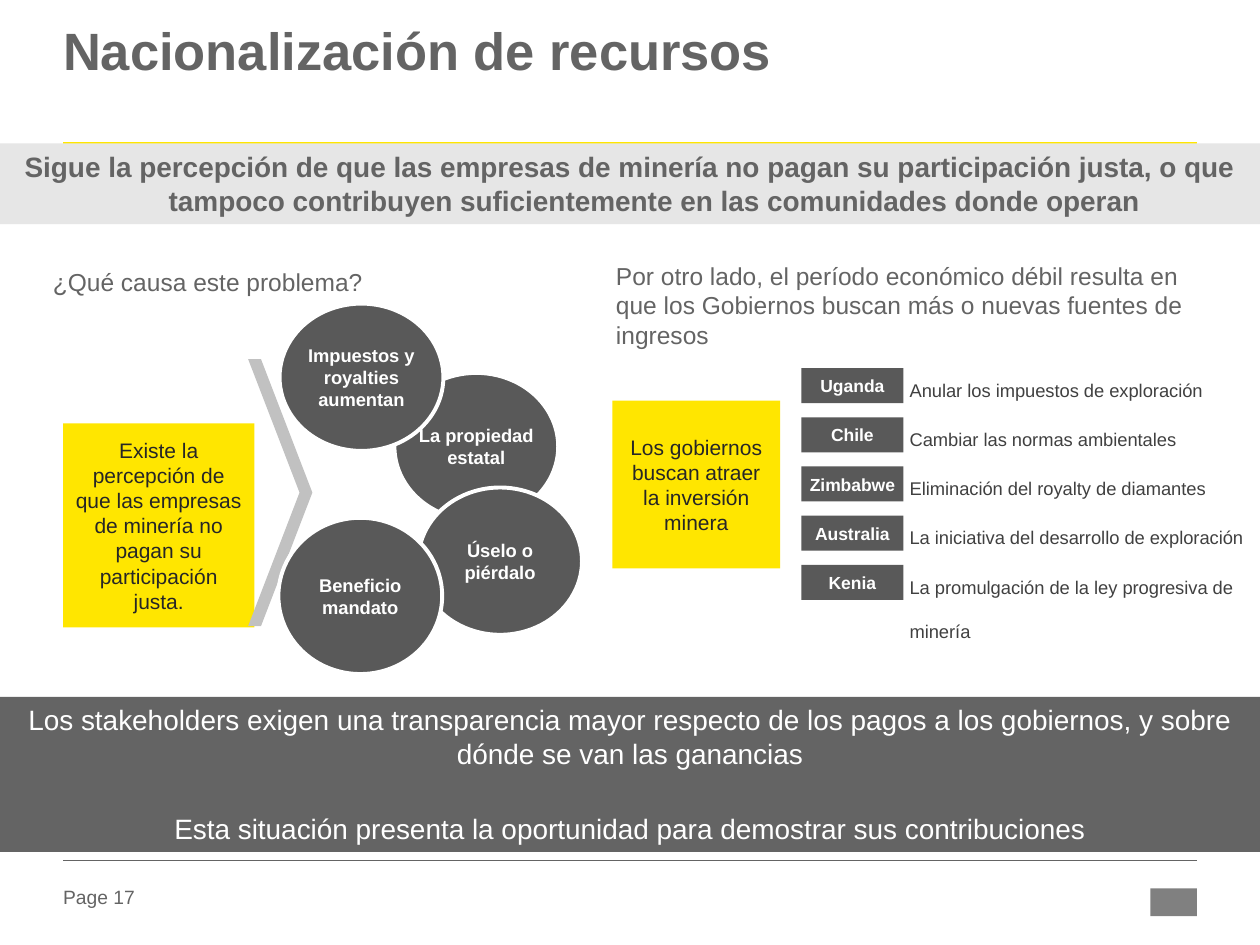
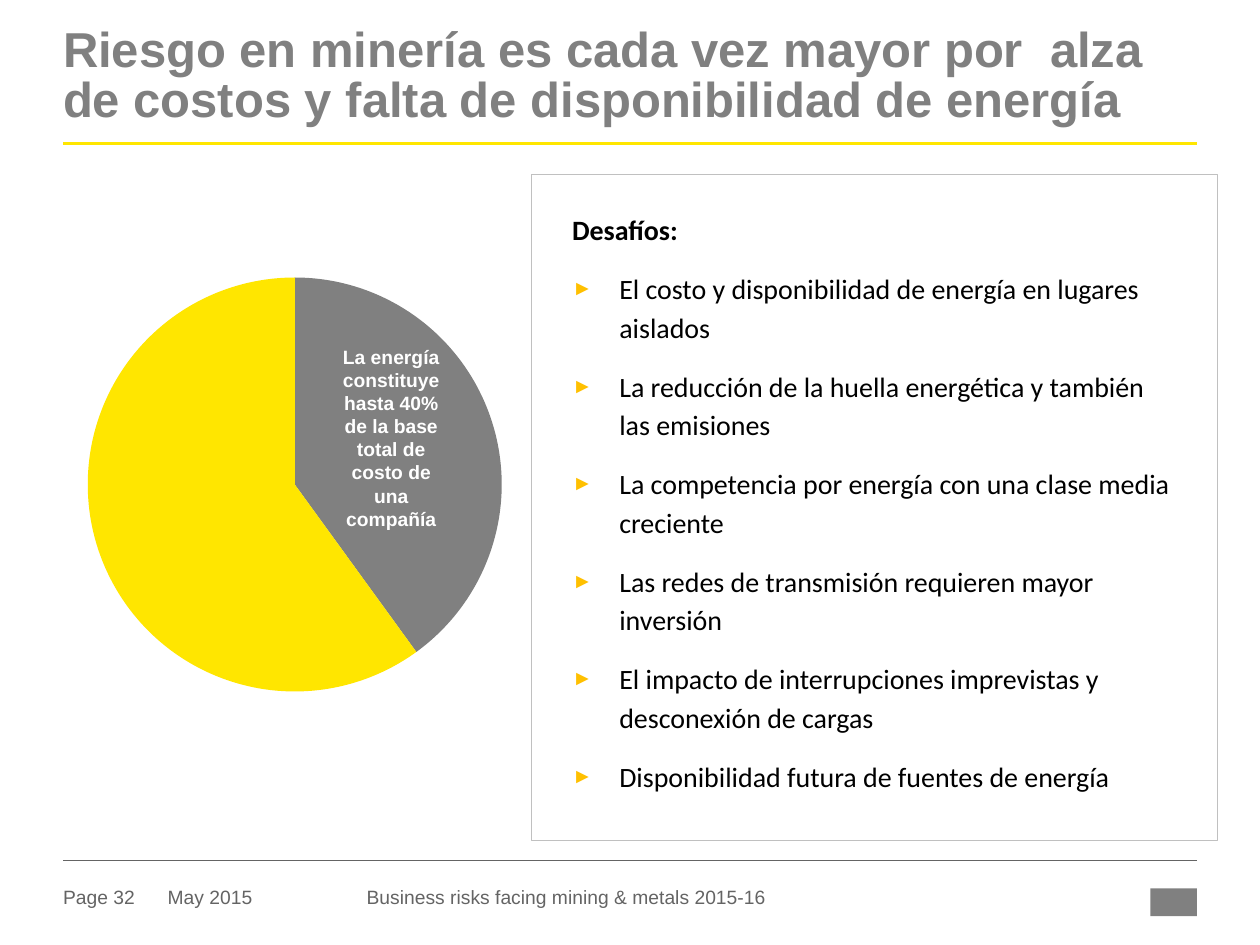
from lxml.etree import SubElement
from pptx import Presentation
from pptx.chart.data import CategoryChartData
from pptx.dml.color import RGBColor
from pptx.enum.chart import XL_CHART_TYPE
from pptx.enum.shapes import MSO_CONNECTOR, MSO_SHAPE
from pptx.enum.text import MSO_ANCHOR, MSO_AUTO_SIZE, PP_ALIGN
from pptx.oxml.ns import qn
from pptx.util import Pt

YELLOW = "FFE600"
SLATE = "646464"
CHARCOAL = "595959"
GREY = "808080"
SILVER = "C0C0C0"
WHITE = "FFFFFF"
BLACK = "000000"

LEFT, RIGHT = 36, 684
TITLE_RULE_Y, FOOTER_RULE_Y = 82, 491.8
FOOTER_TOP, FOOTER_HEIGHT = 504.7, 15.8
DEFAULT_INSETS = (7.2, 3.6, 7.2, 3.6)
NO_INSETS = (0, 0, 0, 0)


def rgb(hex_color):
    return RGBColor.from_string(hex_color)


def place(shape, left, top, width, height):
    shape.left, shape.top = Pt(left), Pt(top)
    shape.width, shape.height = Pt(width), Pt(height)


def set_frame(shape, insets=NO_INSETS, anchor=MSO_ANCHOR.TOP, wrap=True):
    frame = shape.text_frame
    frame.auto_size = MSO_AUTO_SIZE.NONE
    frame.word_wrap = wrap
    frame.vertical_anchor = anchor
    frame.margin_left, frame.margin_top, frame.margin_right, frame.margin_bottom = map(Pt, insets)


def add_para(shape, text, size, color, bold=False, font="Arial",
             align=PP_ALIGN.LEFT, line=1.0, before=0, after=0, margin=0, indent=0):
    """Write into the empty first paragraph, or append a new one."""
    frame = shape.text_frame
    para = frame.paragraphs[0]
    if para.runs:
        para = frame.add_paragraph()
    para.alignment = align
    para.line_spacing = line
    para.space_before, para.space_after = Pt(before), Pt(after)
    properties = para._p.get_or_add_pPr()
    properties.set("marL", str(Pt(margin)))
    properties.set("indent", str(Pt(indent)))
    span = para.add_run()
    span.text = text
    span.font.name, span.font.size, span.font.bold = font, Pt(size), bold
    span.font.color.rgb = rgb(color)
    return para


def set_bullet(para, char=None, color="FFC000", percent=75):
    """Give the paragraph a bullet, or switch off the inherited one."""
    properties = para._p.get_or_add_pPr()
    if char is None:
        SubElement(properties, qn("a:buNone"))
        return
    tint = SubElement(properties, qn("a:buClr"))
    SubElement(tint, qn("a:srgbClr"), val=color)
    SubElement(properties, qn("a:buSzPct"), val=str(percent * 1000))
    SubElement(properties, qn("a:buFont"), typeface="Arial")
    SubElement(properties, qn("a:buChar"), char=char)


def add_block(page, kind, bounds, fill=None, outline=None, outline_width=1):
    block = page.shapes.add_shape(kind, *map(Pt, bounds))
    block.shadow.inherit = False
    if fill:
        block.fill.solid()
        block.fill.fore_color.rgb = rgb(fill)
    else:
        block.fill.background()
    if outline:
        block.line.color.rgb = rgb(outline)
        block.line.width = Pt(outline_width)
    else:
        block.line.fill.background()
    return block


def add_label(page, kind, bounds, fill, text, size, outline=None):
    """Dark shape with bold white text in its middle."""
    label = add_block(page, kind, bounds, fill, outline, 2.25)
    set_frame(label, anchor=MSO_ANCHOR.MIDDLE)
    add_para(label, text, size, WHITE, True, align=PP_ALIGN.CENTER)


def add_yellow_box(page, bounds, text):
    box = add_block(page, MSO_SHAPE.RECTANGLE, bounds, YELLOW)
    set_frame(box, (7.2,) * 4, MSO_ANCHOR.MIDDLE)
    add_para(box, text, 12, "262626", align=PP_ALIGN.CENTER, before=1.8, after=1.8)


def add_band(page, top, height, fill):
    band = add_block(page, MSO_SHAPE.RECTANGLE, (0, top, 720, height), fill)
    set_frame(band, DEFAULT_INSETS)
    return band


def add_text(page, bounds, text, size, color, bold=False, align=PP_ALIGN.LEFT,
             insets=NO_INSETS, anchor=MSO_ANCHOR.TOP, wrap=True):
    box = page.shapes.add_textbox(*map(Pt, bounds))
    set_frame(box, insets, anchor, wrap)
    add_para(box, text, size, color, bold, align=align)


def add_footer(page, left, width, text, wrap=True):
    add_text(page, (left, FOOTER_TOP, width, FOOTER_HEIGHT), text, 11, SLATE,
             anchor=MSO_ANCHOR.MIDDLE, wrap=wrap)


def add_rule(page, y, color, width):
    rule = page.shapes.add_connector(MSO_CONNECTOR.STRAIGHT, Pt(LEFT), Pt(y), Pt(RIGHT), Pt(y))
    rule.line.color.rgb = rgb(color)
    rule.line.width = Pt(width)
    SubElement(rule._element.spPr, qn("a:effectLst"))


def add_page(deck, title, title_size, title_color, number):
    """Page with title, rules, page number and a plain mark at the lower right."""
    page = deck.slides.add_slide(deck.slide_layouts[1])
    place(page.shapes.title, LEFT, 15.8, RIGHT - LEFT, 67.7)
    set_frame(page.shapes.title)
    add_para(page.shapes.title, title, title_size, title_color, True, line=0.85)
    add_rule(page, TITLE_RULE_Y, YELLOW, 1.5)
    add_rule(page, FOOTER_RULE_Y, SLATE, 0.25)
    add_footer(page, LEFT, 57, f"Page {number}")
    add_block(page, MSO_SHAPE.RECTANGLE, (657.4, 507.6, 26.6, 16), GREY)
    return page


def add_cost_pie(page):
    data = CategoryChartData()
    data.categories = ["1", "2"]
    data.add_series("Series 1", (40, 60))
    bounds = map(Pt, (-45.4, 108, 455, 331.2))
    chart = page.shapes.add_chart(XL_CHART_TYPE.PIE, *bounds, data).chart
    chart.has_title = chart.has_legend = False
    chart.font.name, chart.font.size = "Arial", Pt(8)
    chart.font.color.rgb = rgb(BLACK)
    plot = chart.plots[0]
    plot.vary_by_categories = False
    for index, color in enumerate((GREY, YELLOW)):
        slice_format = plot.series[0].points[index].format
        slice_format.fill.solid()
        slice_format.fill.fore_color.rgb = rgb(color)
        slice_format.line.fill.background()
    area = chart._chartSpace.chart.plotArea
    for old_layout in area.findall(qn("c:layout")):
        area.remove(old_layout)
    layout = SubElement(area, qn("c:layout"))
    area.insert(0, layout)
    manual = SubElement(layout, qn("c:manualLayout"))
    settings = {"layoutTarget": "inner", "xMode": "edge", "yMode": "edge",
                "x": "0.21", "y": "0.15", "w": "0.52", "h": "0.72"}
    for name, value in settings.items():
        SubElement(manual, qn(f"c:{name}"), val=value)


def build_nationalization(deck):
    page = add_page(deck, "Nacionalización de recursos", 30, SLATE, 17)
    add_yellow_box(page, (LEFT, 241.9, 109.4, 116.6),
                   "Existe la percepción de que las empresas de minería no pagan "
                   "su participación justa.")
    add_text(page, (30.2, 152.6, 329.8, 80), "¿Qué causa este problema?", 14, SLATE)
    chevron = add_block(page, MSO_SHAPE.CHEVRON, (141.8, 205.2, 36.7, 152.6), "C1C1C1")
    chevron.adjustments[0] = 0.8
    add_yellow_box(page, (350, 229, 95.8, 95.8),
                   "Los gobiernos buscan atraer la inversión minera")

    demands = add_band(page, 398.2, 88.6, SLATE)
    add_para(demands, "Los stakeholders exigen una transparencia mayor respecto de los pagos "
             "a los gobiernos, y sobre dónde se van las ganancias",
             16, WHITE, align=PP_ALIGN.CENTER, after=23.5)
    add_para(demands, "Esta situación presenta la oportunidad para demostrar sus contribuciones",
             16, WHITE, align=PP_ALIGN.CENTER)

    add_text(page, (352, 149, 342.7, 80),
             "Por otro lado, el período económico débil resulta en que los Gobiernos buscan "
             "más o nuevas fuentes de ingresos", 14, SLATE)

    measures = {
        "Uganda": "Anular los impuestos de exploración",
        "Chile": "Cambiar las normas ambientales",
        "Zimbabwe": "Eliminación del royalty de diamantes",
        "Australia": "La iniciativa del desarrollo de exploración",
        "Kenia": "La promulgación de la ley progresiva de minería",
    }
    body = page.placeholders[1]
    place(body, 519.8, 203.8, 196.6, 124.6)
    set_frame(body)
    for row, (country, measure) in enumerate(measures.items()):
        set_bullet(add_para(body, measure, 10.5, "404040", line=2.0, after=3))
        add_label(page, MSO_SHAPE.RECTANGLE, (457.9, 210.4 + 28.1 * row, 58.3, 20),
                  CHARCOAL, country, 10)

    perception = add_band(page, TITLE_RULE_Y, 46.1, "E6E6E6")
    add_para(perception, "Sigue la percepción de que las empresas de minería no pagan su "
             "participación justa, o que tampoco contribuyen suficientemente en las "
             "comunidades donde operan", 16, SLATE, True,
             align=PP_ALIGN.CENTER, after=6, margin=28, indent=-28)

    causes = [
        ("La propiedad estatal", 225.4, 213.1, 84.2),
        ("Impuestos y royalties aumentan", 159.8, 173.5, 84.2),
        ("Úselo o piérdalo", 239, 278.6, 84.2),
        ("Beneficio mandato", 159.1, 295.9, 89.3),
    ]
    for cause, left, top, height in causes:
        add_label(page, MSO_SHAPE.OVAL, (left, top, 93.6, height), CHARCOAL, cause, 10.5, WHITE)


def build_energy_risk(deck):
    page = add_page(deck, "Riesgo en minería es cada vez mayor por  alza de costos y falta de "
                    "disponibilidad de energía", 28, GREY, 32)
    add_footer(page, 95.8, 93.6, "May 2015", wrap=False)
    add_footer(page, 209.5, 270.7, "Business risks facing mining & metals 2015-16")
    add_cost_pie(page)
    add_block(page, MSO_SHAPE.RECTANGLE, (303.8, 99.4, 391.7, 380.9),
              outline=SILVER, outline_width=0.5)
    add_text(page, (182.9, 193.7, 81.4, 113.8),
             "La energía constituye hasta 40% de la base total de costo de una compañía",
             11, WHITE, True, PP_ALIGN.CENTER, DEFAULT_INSETS)

    body = page.placeholders[1]
    place(body, 319.7, 115.2, 360, 344.9)
    set_frame(body, DEFAULT_INSETS)
    style = dict(size=16, color=BLACK, font="Calibri", line=1.14, before=6, after=6)
    set_bullet(add_para(body, "Desafíos:", bold=True, **style))
    challenges = [
        "El costo y disponibilidad de energía en lugares aislados",
        "La reducción de la huella energética y también las emisiones",
        "La competencia por energía con una clase media creciente",
        "Las redes de transmisión requieren mayor inversión",
        "El impacto de interrupciones imprevistas y desconexión de cargas",
        "Disponibilidad futura de fuentes de energía",
    ]
    for challenge in challenges:
        set_bullet(add_para(body, challenge, margin=27, indent=-27, **style), "►")


def main():
    deck = Presentation()
    deck.slide_width, deck.slide_height = Pt(720), Pt(540)
    build_nationalization(deck)
    build_energy_risk(deck)
    deck.save("out.pptx")


if __name__ == "__main__":
    main()
